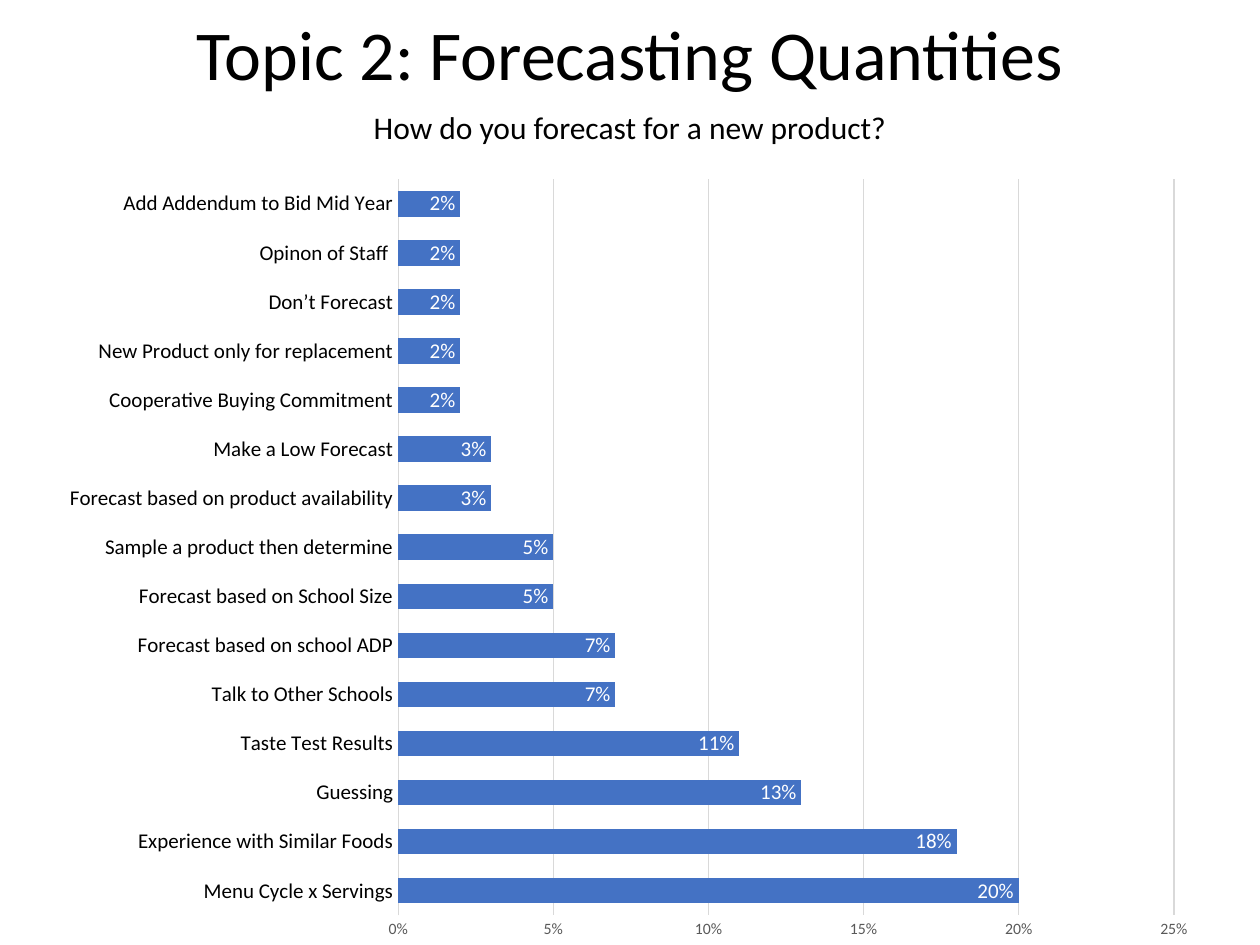
from dataclasses import dataclass

from pptx import Presentation
from pptx.chart.data import CategoryChartData
from pptx.dml.color import RGBColor
from pptx.enum.chart import XL_CHART_TYPE, XL_LABEL_POSITION, XL_TICK_MARK
from pptx.enum.text import MSO_ANCHOR, PP_ALIGN
from pptx.util import Inches, Pt

BAR_CLUSTERED = XL_CHART_TYPE.BAR_CLUSTERED
INSIDE_END = XL_LABEL_POSITION.INSIDE_END
NO_TICK = XL_TICK_MARK.NONE
TOP, BOTTOM = MSO_ANCHOR.TOP, MSO_ANCHOR.BOTTOM
CENTER = PP_ALIGN.CENTER

# Answers from the bottom bar to the top one
ANSWERS = [
    ("Menu Cycle x Servings", 0.20),
    ("Experience with Similar Foods", 0.18),
    ("Guessing", 0.13),
    ("Taste Test Results", 0.11),
    ("Talk to Other Schools", 0.07),
    ("Forecast based on school ADP", 0.07),
    ("Forecast based on School Size", 0.05),
    ("Sample a product then determine", 0.05),
    ("Forecast based on product availability", 0.03),
    ("Make a Low Forecast", 0.03),
    ("Cooperative Buying Commitment", 0.02),
    ("New Product only for replacement", 0.02),
    ("Don’t Forecast", 0.02),
    ("Opinon of Staff ", 0.02),
    ("Add Addendum to Bid Mid Year", 0.02),
]


@dataclass(frozen=True)
class Theme:
    font: str = "Calibri"
    text: str = "000000"
    muted: str = "595959"
    grid: str = "D9D9D9"
    bar: str = "4472C4"
    on_bar: str = "FFFFFF"
    title_size: int = 40
    subtitle_size: int = 18
    label_size: int = 12
    chart_size: int = 10
    scale_size: int = 9
    line_width: float = 0.75


class SlideBuilder:
    def __init__(self, presentation, theme):
        self.presentation = presentation
        self.theme = theme
        self.slide = presentation.slides.add_slide(presentation.slide_layouts[6])

    def box(self, left, top, width, height):
        """Turn shares of the slide's size into lengths."""
        across, down = self.presentation.slide_width, self.presentation.slide_height
        return (int(left * across), int(top * down),
                int(width * across), int(height * down))

    def style_font(self, font, size, color):
        font.name = self.theme.font
        font.size = Pt(size)
        font.color.rgb = RGBColor.from_string(color)

    def style_line(self, line):
        line.color.rgb = RGBColor.from_string(self.theme.grid)
        line.width = Pt(self.theme.line_width)

    def text(self, text, area, size, anchor=TOP, line_spacing=1.0):
        frame = self.slide.shapes.add_textbox(*self.box(*area)).text_frame
        frame.word_wrap = True
        frame.vertical_anchor = anchor
        paragraph = frame.paragraphs[0]
        paragraph.text = text
        paragraph.alignment = CENTER
        paragraph.line_spacing = line_spacing
        self.style_font(paragraph.font, size, self.theme.text)

    def bar_chart(self, answers, area, maximum, step):
        theme = self.theme
        data = CategoryChartData(number_format="0%")
        data.categories = [answer for answer, _ in answers]
        data.add_series("Series 1", [share for _, share in answers])
        chart = self.slide.shapes.add_chart(
            BAR_CLUSTERED, *self.box(*area), data).chart
        chart.has_legend = False
        chart.has_title = False
        self.style_font(chart.font, theme.chart_size, theme.text)

        # Bars and their labels
        plot = chart.plots[0]
        plot.gap_width = 92
        plot.vary_by_categories = False
        series = plot.series[0]
        series.format.fill.solid()
        series.format.fill.fore_color.rgb = RGBColor.from_string(theme.bar)
        labels = series.data_labels
        labels.show_value = True
        labels.position = INSIDE_END
        labels.number_format = "0%"
        labels.number_format_is_linked = False
        self.style_font(labels.font, theme.label_size, theme.on_bar)

        # Axes
        category_axis, value_axis = chart.category_axis, chart.value_axis
        for axis in (category_axis, value_axis):
            axis.major_tick_mark = axis.minor_tick_mark = NO_TICK
        self.style_font(category_axis.tick_labels.font, theme.label_size, theme.text)
        self.style_line(category_axis.format.line)
        value_axis.minimum_scale = 0
        value_axis.maximum_scale = maximum
        value_axis.major_unit = step
        value_axis.tick_labels.number_format = "0%"
        value_axis.tick_labels.number_format_is_linked = False
        self.style_font(value_axis.tick_labels.font, theme.scale_size, theme.muted)
        value_axis.format.line.fill.background()
        self.style_line(value_axis.major_gridlines.format.line)


def main():
    presentation = Presentation()
    presentation.slide_width, presentation.slide_height = Inches(10), Inches(7.5)
    theme = Theme()
    builder = SlideBuilder(presentation, theme)

    # Heading
    builder.text("Topic 2: Forecasting Quantities", (0.01, 0, 0.98, 0.108),
                 theme.title_size, BOTTOM, 0.9)
    builder.text("How do you forecast for a new product?", (0.01, 0.108, 0.98, 0.053),
                 theme.subtitle_size)

    # Survey answers
    builder.bar_chart(ANSWERS, (0.037, 0.173, 0.924, 0.837), maximum=0.25, step=0.05)

    presentation.save("out.pptx")


if __name__ == "__main__":
    main()
